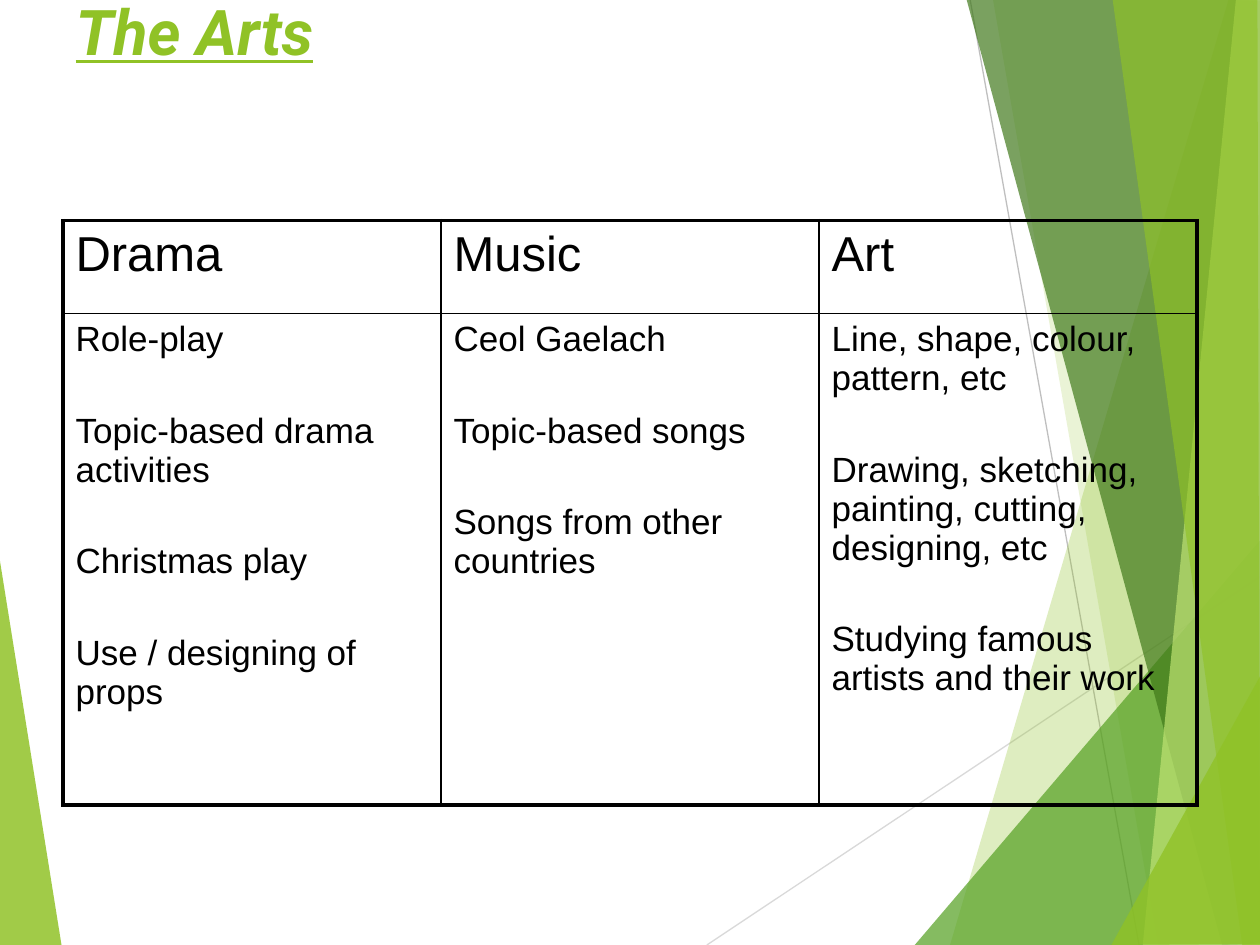
from lxml.etree import SubElement
from pptx import Presentation
from pptx.dml.color import RGBColor
from pptx.enum.text import MSO_ANCHOR, PP_ALIGN
from pptx.oxml.ns import qn
from pptx.util import Inches, Pt

TITLE = "The Arts"
SUBJECTS = {
    "Drama": ["Role-play", "Topic-based drama activities", "Christmas play",
              "Use / designing of props"],
    "Music": ["Ceol Gaelach", "Topic-based songs", "Songs from other countries"],
    "Art": ["Line, shape, colour, pattern, etc",
            "Drawing, sketching, painting, cutting, designing, etc",
            "Studying famous artists and their work"],
}
ROW_HEIGHTS = [0.74, 3.9]
COLUMN_WIDTH = 3
THICK, THIN = 2.25, 1
LEFT_SHARD = ("90C226", 84, [(-0.01, 4.39), (0.49, 7.51), (-0.01, 7.5)])
RAYS = [("D9D9D9", (5.61, 7.5), (10.01, 4.57)),
        ("BFBFBF", (7.7, 0), (9.04, 7.5))]
RIGHT_SHARDS = [
    ("90C226", 29, [(9.75, 0), (7.54, 7.5), (10.02, 7.51), (10.01, 0.01)]),
    ("90C226", 19, [(7.88, -0.01), (9.19, 7.5), (10.01, 7.5), (10.01, -0.01)]),
    ("54A021", 71, [(7.26, 7.5), (10, 4.29), (10.01, 7.5)]),
    ("3F7819", 69, [(7.67, -0.01), (9.7, 7.5), (10.01, 7.49), (10.01, -0.01)]),
    ("C0E474", 69, [(9.81, -0.01), (9.07, 7.5), (10.01, 7.5), (10, -0.01)]),
    ("90C226", 64, [(8.83, -0.01), (9.86, 7.5), (10, 7.5), (9.98, -0.01)]),
    ("90C226", 79, [(8.82, 7.5), (10.01, 5.35), (10.01, 7.49)]),
]


def paint(color_format, color):
    color_format.rgb = RGBColor.from_string(color)


def add_shard(slide, color, opacity, points):
    start, *rest = [(Inches(x), Inches(y)) for x, y in points]
    builder = slide.shapes.build_freeform(*start)
    builder.add_line_segments(rest, close=True)
    shard = builder.convert_to_shape()
    shard.shadow.inherit = False
    shard.line.fill.background()
    shard.fill.solid()
    paint(shard.fill.fore_color, color)
    tint = shard.fill._xPr.find(qn("a:solidFill"))[0]
    SubElement(tint, qn("a:alpha"), val=str(opacity * 1000))


def add_ray(slide, color, start, end):
    ray = slide.shapes.add_connector(1, *map(Inches, start + end))
    ray.line.width = Pt(0.75)
    paint(ray.line.color, color)
    SubElement(ray._element.spPr, qn("a:effectLst"))


def write(paragraph, text, size, color, font):
    run = paragraph.add_run()
    run.text = text
    run.font.size = Pt(size)
    run.font.name = font
    paint(run.font.color, color)
    return run


def set_borders(cell, widths):
    properties = cell._tc.get_or_add_tcPr()
    for side, width in widths.items():
        border = SubElement(properties, qn(f"a:ln{side}"), w=str(Pt(width)))
        fill = SubElement(border, qn("a:solidFill"))
        SubElement(fill, qn("a:srgbClr"), val="000000")


def fill_cell(cell, items, size):
    for index, item in enumerate(items):
        frame = cell.text_frame
        paragraph = frame.add_paragraph() if index else frame.paragraphs[0]
        paragraph.space_before = Pt(30 if index else 0)
        write(paragraph, item, size, "000000", "Arial")


def add_subjects(slide):
    rows, columns = len(ROW_HEIGHTS), len(SUBJECTS)
    table = slide.shapes.add_table(
        rows, columns, Inches(0.5), Inches(1.75),
        Inches(COLUMN_WIDTH * columns), Inches(sum(ROW_HEIGHTS))).table
    table.first_row = table.horz_banding = False
    for row, height in zip(table.rows, ROW_HEIGHTS):
        row.height = Inches(height)
    for c, (subject, activities) in enumerate(SUBJECTS.items()):
        for r, (items, size) in enumerate([([subject], 28), (activities, 20)]):
            cell = table.cell(r, c)
            outer = {"L": c == 0, "R": c == columns - 1,
                     "T": r == 0, "B": r == rows - 1}
            set_borders(cell, {side: THICK if edge else THIN
                               for side, edge in outer.items()})
            cell.fill.background()
            fill_cell(cell, items, size)


def main():
    deck = Presentation()
    deck.slide_width, deck.slide_height = Inches(10), Inches(7.5)
    slide = deck.slides.add_slide(deck.slide_layouts[5])

    add_shard(slide, *LEFT_SHARD)
    for ray in RAYS:
        add_ray(slide, *ray)
    for shard in RIGHT_SHARDS:
        add_shard(slide, *shard)

    title = slide.shapes.title
    title.left, title.top = Inches(0.5), Inches(-0.11)
    title.width, title.height = Inches(9), Inches(1.25)
    title.text_frame.vertical_anchor = MSO_ANCHOR.TOP
    heading = title.text_frame.paragraphs[0]
    heading.alignment = PP_ALIGN.LEFT
    font = write(heading, TITLE, 36, "90C226", "Roboto").font
    font.bold = font.italic = font.underline = True

    add_subjects(slide)
    deck.save("out.pptx")


if __name__ == "__main__":
    main()
